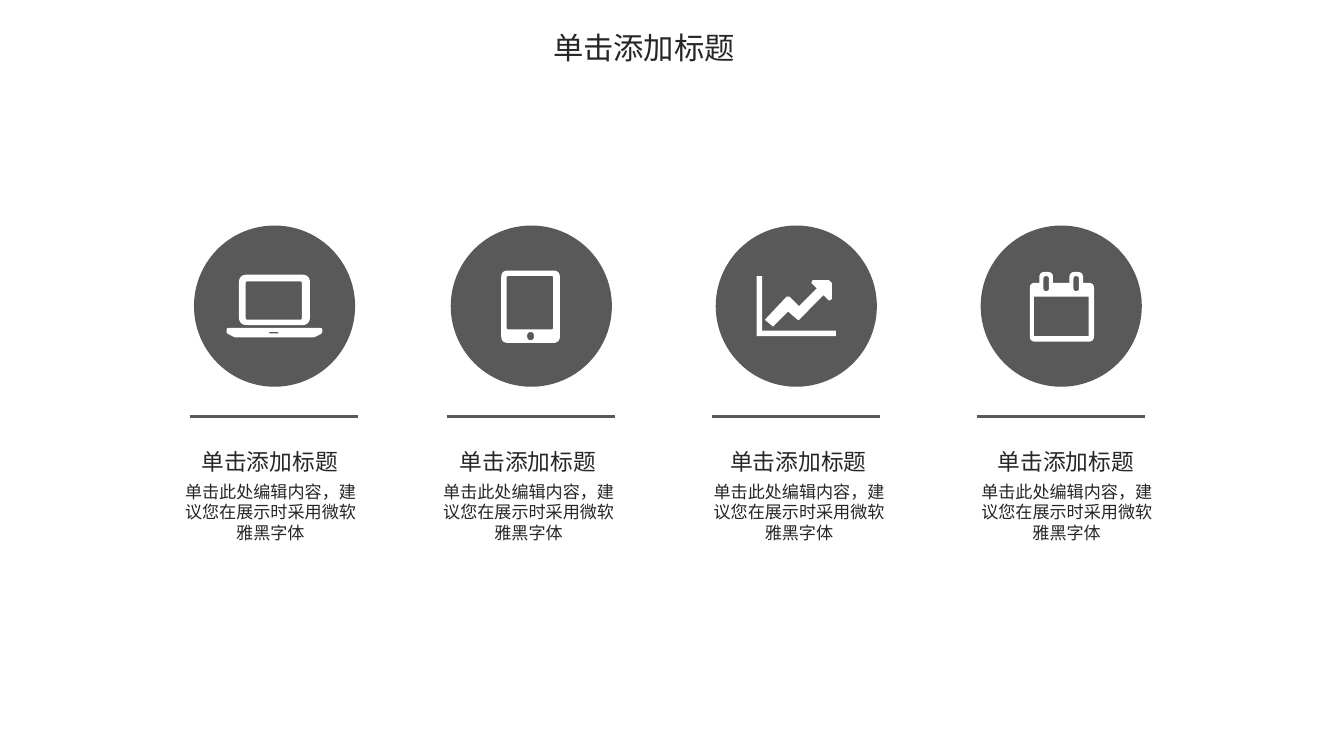
from math import hypot

from lxml.etree import SubElement
from pptx import Presentation
from pptx.dml.color import RGBColor
from pptx.enum.shapes import MSO_CONNECTOR, MSO_SHAPE
from pptx.enum.text import MSO_ANCHOR, PP_ALIGN
from pptx.oxml.ns import qn
from pptx.util import Inches, Pt

COLORS = {"disc": "595959", "icon": "FFFFFF", "text": "262626"}
FONT = "Noto Sans CJK SC"
HEAD = "单击添加标题"
BODY = "单击此处编辑内容，建议您在展示时采用微软雅黑字体"

# Left edges of each disc and of the text below it
COLUMNS = [(1.42, 1.35), (3.3, 3.24), (5.24, 5.22), (7.18, 7.18)]
DISC_TOP, DISC_SIZE = 1.65, 1.18
TEXT_TOP, TEXT_WIDTH = 3.28, 1.26


def rect(left, top, right, bottom):
    return [(left, top), (right, top), (right, bottom), (left, bottom)]


# Icon outlines: corner radius and points, in hundredths of an inch from the disc's box
LAPTOP = [
    (1.5, [(24, 75), (94, 75), (94, 79), (88, 82), (30, 82), (24, 79)]),
    (6, rect(33, 36, 85, 73)),
    (1, rect(38, 41, 79, 69)),
    (0.5, rect(55, 78, 62, 79)),
]
TABLET = [
    (5, rect(37, 33, 80, 86)),
    (1, rect(41, 37, 75, 76)),
    (3, rect(56, 78, 61, 84)),
]
CHART = [
    (0, [(30, 37), (34, 37), (34, 77), (88, 77), (88, 81), (30, 81)]),
    (0, [(85, 54), (83, 55), (79, 51), (61, 69), (60, 69), (53, 63),
         (42, 74), (36, 69), (52, 52), (54, 52), (61, 59), (74, 46),
         (70, 42), (71, 40), (83, 40), (85, 42)]),
]
CALENDAR = [
    (4, [(36, 42), (43, 42), (43, 34), (53, 34), (53, 42), (65, 42),
         (65, 34), (75, 34), (75, 42), (83, 42), (83, 85), (36, 85)]),
    (0, rect(39, 52, 79, 81)),
    (2, rect(46, 37, 50, 48)),
    (2, rect(68, 37, 72, 48)),
]


def curve(points, radius):
    """Round the outward corners of a clockwise outline."""
    result = []
    for i, (x, y) in enumerate(points):
        px, py = points[i - 1]
        nx, ny = points[(i + 1) % len(points)]
        ax, ay, bx, by = px - x, py - y, nx - x, ny - y
        if not radius or ax * by - ay * bx > 0:
            result.append((x, y))
            continue
        before, after = hypot(ax, ay), hypot(bx, by)
        a = min(radius, before / 2) / before
        b = min(radius, after / 2) / after
        for step in range(7):
            t = step / 6
            u, v = a * (1 - t) ** 2, b * t ** 2
            result.append((x + ax * u + bx * v, y + ay * u + by * v))
    return [(Inches(x / 100), Inches(y / 100)) for x, y in result]


def paint(shape, color):
    shape.fill.solid()
    shape.fill.fore_color.rgb = RGBColor.from_string(COLORS[color])
    shape.line.fill.background()
    shape.shadow.inherit = False


def write(shape, text, size, align, wrap=True, inset=(0, 0)):
    frame = shape.text_frame
    side, edge = (Inches(n) for n in inset)
    form = {"margin_left": side, "margin_right": side, "margin_top": edge,
            "margin_bottom": edge, "word_wrap": wrap,
            "vertical_anchor": MSO_ANCHOR.TOP}
    for name, value in form.items():
        setattr(frame, name, value)
    para = frame.paragraphs[0]
    para.alignment = align
    run = para.add_run()
    run.text = text
    for name, value in {"size": Pt(size), "name": FONT, "bold": False}.items():
        setattr(run.font, name, value)
    run.font.color.rgb = RGBColor.from_string(COLORS["text"])
    SubElement(run.font._element, qn("a:ea"), typeface=FONT)


def add_title(slide, left, top, width, height):
    title = slide.shapes.title
    box = {"left": left, "top": top, "width": width, "height": height}
    for name, value in box.items():
        setattr(title, name, Inches(value))
    write(title, HEAD, 16, PP_ALIGN.LEFT, inset=(0.1, 0.05))


def add_badge(slide, left, top, size, icon):
    # Disc
    x, y, side = Inches(left), Inches(top), Inches(size)
    disc = slide.shapes.add_shape(MSO_SHAPE.OVAL, x, y, side, side)
    paint(disc, "disc")

    # Icon, with inner outlines as holes
    outlines = [curve(points, radius) for radius, points in icon]
    pen = slide.shapes.build_freeform(*outlines[0][0])
    pen.add_line_segments(outlines[0][1:])
    for first, *rest in outlines[1:]:
        pen.move_to(*first)
        pen.add_line_segments(rest)
    paint(pen.convert_to_shape(x, y), "icon")

    # Rule below the disc
    level = Inches(top + size + 0.22)
    rule = slide.shapes.add_connector(
        MSO_CONNECTOR.STRAIGHT, Inches(left - 0.03), level,
        Inches(left + size + 0.02), level)
    rule.line.color.rgb = RGBColor.from_string(COLORS["disc"])
    rule.line.width = Pt(1.5)
    SubElement(rule._element.spPr, qn("a:effectLst"))


def add_text(slide, left, top, width):
    head = slide.shapes.add_textbox(
        Inches(left + 0.12), Inches(top), Inches(width - 0.25), Inches(0.2))
    write(head, HEAD, 12, PP_ALIGN.CENTER, wrap=False)
    body = slide.shapes.add_textbox(
        Inches(left), Inches(top + 0.24), Inches(width), Inches(0.45))
    write(body, BODY, 9, PP_ALIGN.CENTER)


def main():
    deck = Presentation()
    deck.slide_width, deck.slide_height = Inches(9.84), Inches(5.51)
    slide = deck.slides.add_slide(deck.slide_layouts[5])
    add_title(slide, 3.95, 0.16, 3.25, 0.37)
    icons = [LAPTOP, TABLET, CHART, CALENDAR]
    for (disc, text), icon in zip(COLUMNS, icons):
        add_badge(slide, disc, DISC_TOP, DISC_SIZE, icon)
        add_text(slide, text, TEXT_TOP, TEXT_WIDTH)
    deck.save("out.pptx")


if __name__ == "__main__":
    main()
